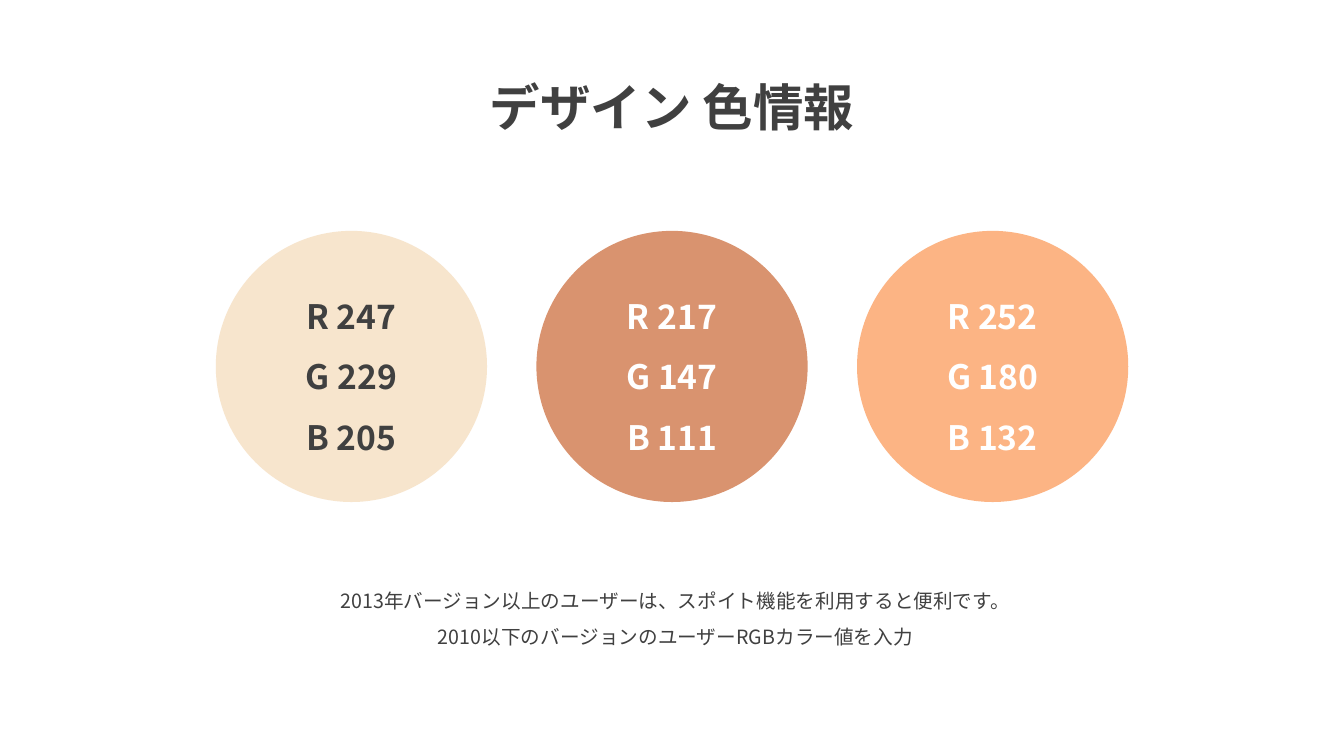
"""Build a slide that lists the RGB values of the three design colours."""
from lxml import etree
from pptx import Presentation
from pptx.dml.color import RGBColor
from pptx.enum.shapes import MSO_SHAPE
from pptx.enum.text import MSO_ANCHOR, MSO_AUTO_SIZE, PP_ALIGN
from pptx.oxml.ns import qn
from pptx.util import Inches, Pt

OVAL = MSO_SHAPE.OVAL
TOP, MIDDLE = MSO_ANCHOR.TOP, MSO_ANCHOR.MIDDLE
CENTER = PP_ALIGN.CENTER
GROW, FIXED = MSO_AUTO_SIZE.SHAPE_TO_FIT_TEXT, MSO_AUTO_SIZE.NONE

TITLE = "デザイン 色情報"
SWATCHES = [
    ("cream", (247, 229, 205), "dark"),
    ("clay", (217, 147, 111), "white"),
    ("peach", (252, 180, 132), "white"),
]
NOTES = [
    "2013年バージョン以上のユーザーは、スポイト機能を利用すると便利です。",
    "2010以下のバージョンのユーザーRGBカラー値を入力",
]
COLORS = {
    "dark": "404040",
    "white": "FFFFFF",
    "cream": "F7E5CD",
    "clay": "D9936F",
    "peach": "FCB484",
}
FONT = "Noto Sans CJK KR"
WIDTH, HEIGHT = 13.33, 7.5
DIAMETER, PITCH, SWATCH_TOP = 2.69, 3.18, 2.29
TITLE_BOX = (4.24, 0.4, 4.85, 0.91)
NOTES_BOX = (2.52, 5.68, 8.36, 0.77)


def write(frame, lines, size, color="dark", bold=False, anchor=TOP, fit=GROW):
    """Fill a text frame with centred lines in one format."""
    frame.word_wrap = True
    frame.auto_size = fit
    frame.vertical_anchor = anchor
    for index, line in enumerate(lines):
        paragraph = frame.add_paragraph() if index else frame.paragraphs[0]
        paragraph.alignment = CENTER
        paragraph.line_spacing = 1.5
        paragraph.space_before = Pt(0)
        run = paragraph.add_run()
        run.text = line
        font = run.font
        font.size, font.bold, font.name = Pt(size), bold, FONT
        font.color.rgb = RGBColor.from_string(COLORS[color])
        east_asian = etree.SubElement(run._r.get_or_add_rPr(), qn("a:ea"))
        east_asian.set("typeface", FONT)


def main():
    """Lay out the title, the swatches and the notes."""
    deck = Presentation()
    deck.slide_width, deck.slide_height = Inches(WIDTH), Inches(HEIGHT)
    slide = deck.slides.add_slide(deck.slide_layouts[5])

    title = slide.shapes.title
    title.left, title.top, title.width, title.height = map(Inches, TITLE_BOX)
    write(title.text_frame, [TITLE], 36, bold=True)

    row_width = PITCH * (len(SWATCHES) - 1) + DIAMETER
    row_left = (WIDTH - row_width) / 2
    for column, (name, rgb, ink) in enumerate(SWATCHES):
        box = (row_left + column * PITCH, SWATCH_TOP, DIAMETER, DIAMETER)
        swatch = slide.shapes.add_shape(OVAL, *map(Inches, box))
        swatch.shadow.inherit = False
        swatch.fill.solid()
        swatch.fill.fore_color.rgb = RGBColor.from_string(COLORS[name])
        swatch.line.fill.background()
        values = [f"{channel} {value}" for channel, value in zip("RGB", rgb)]
        write(swatch.text_frame, values, 24, color=ink, bold=True, anchor=MIDDLE, fit=FIXED)

    notes = slide.shapes.add_textbox(*map(Inches, NOTES_BOX))
    write(notes.text_frame, NOTES, 14)
    deck.save("out.pptx")


if __name__ == "__main__":
    main()
